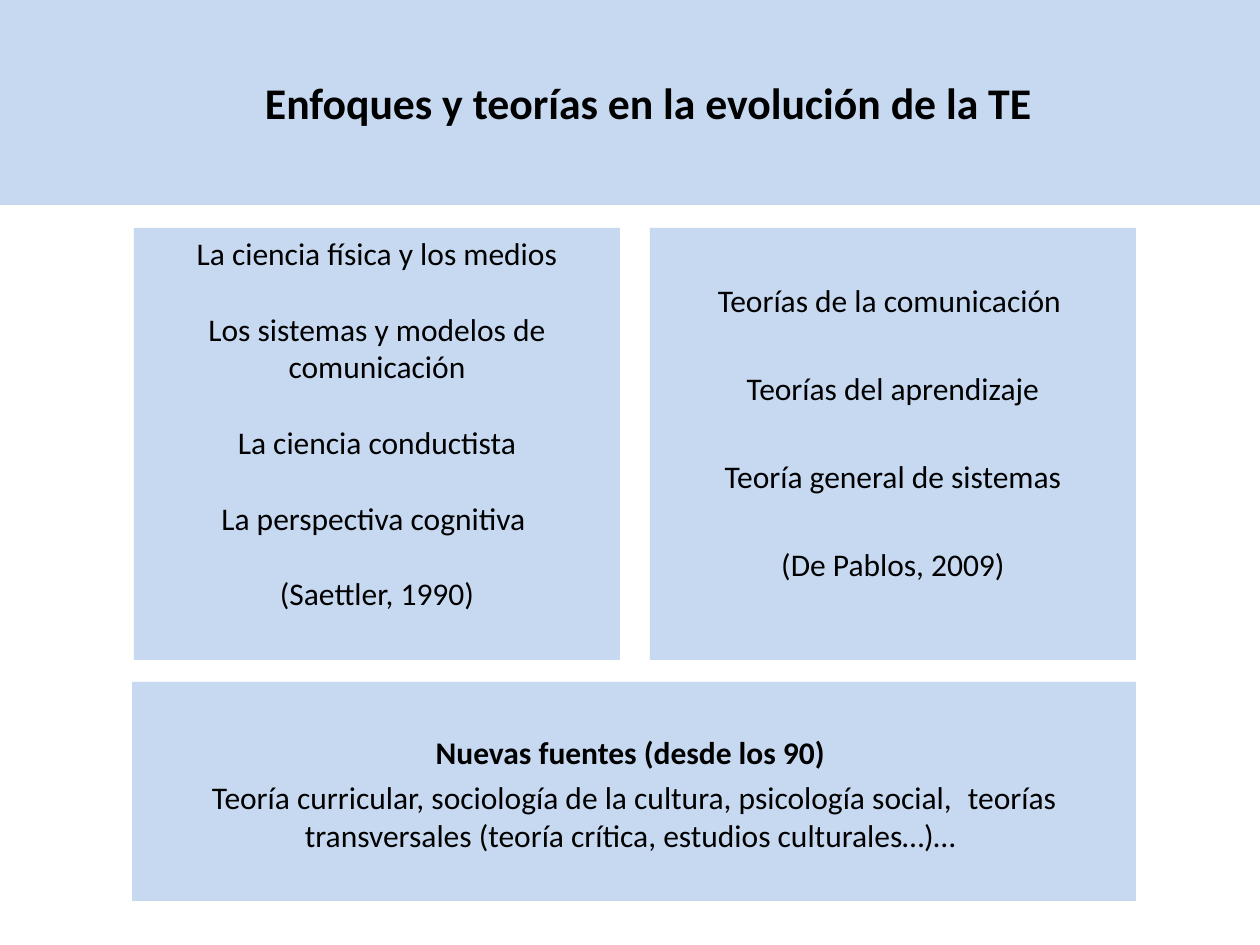
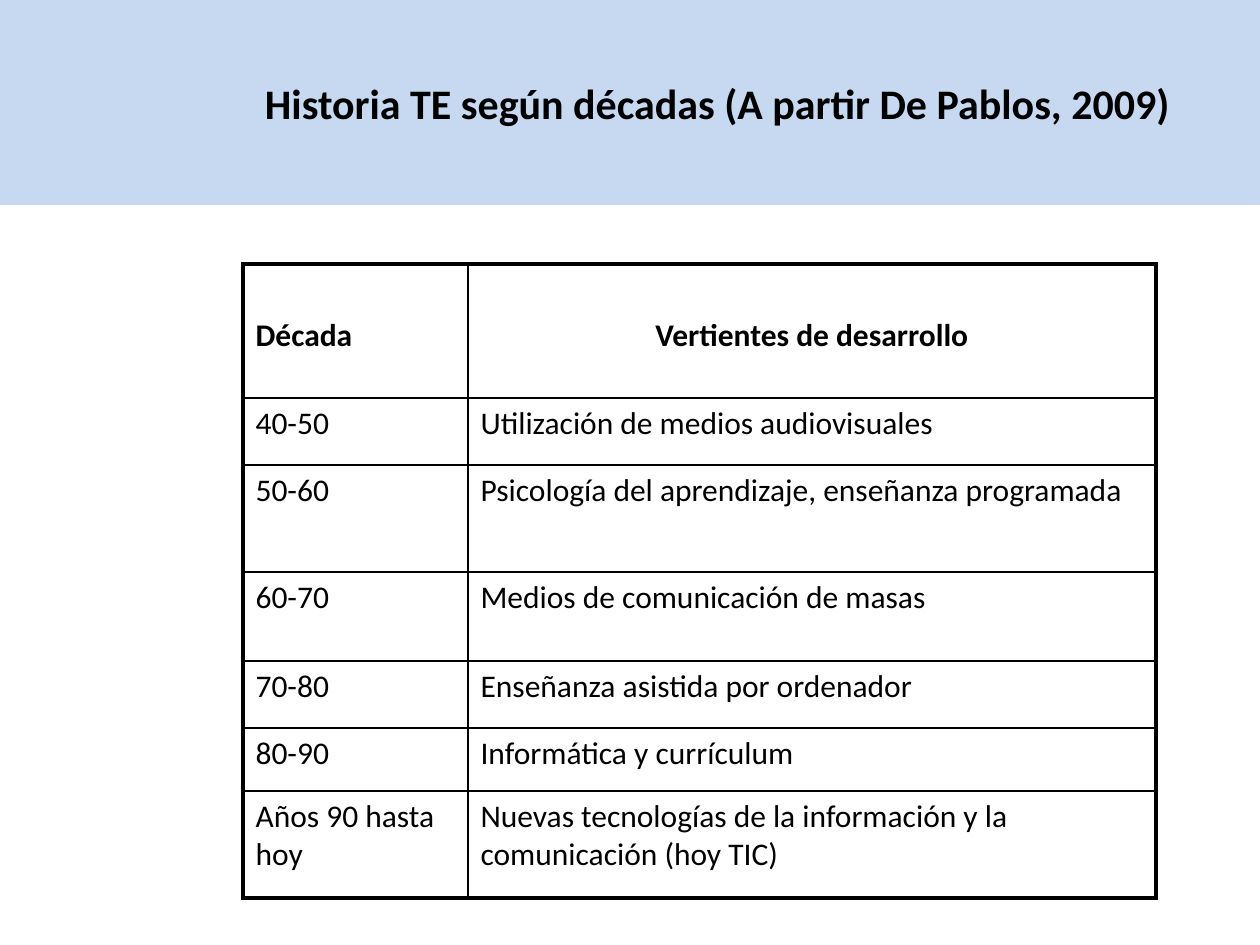
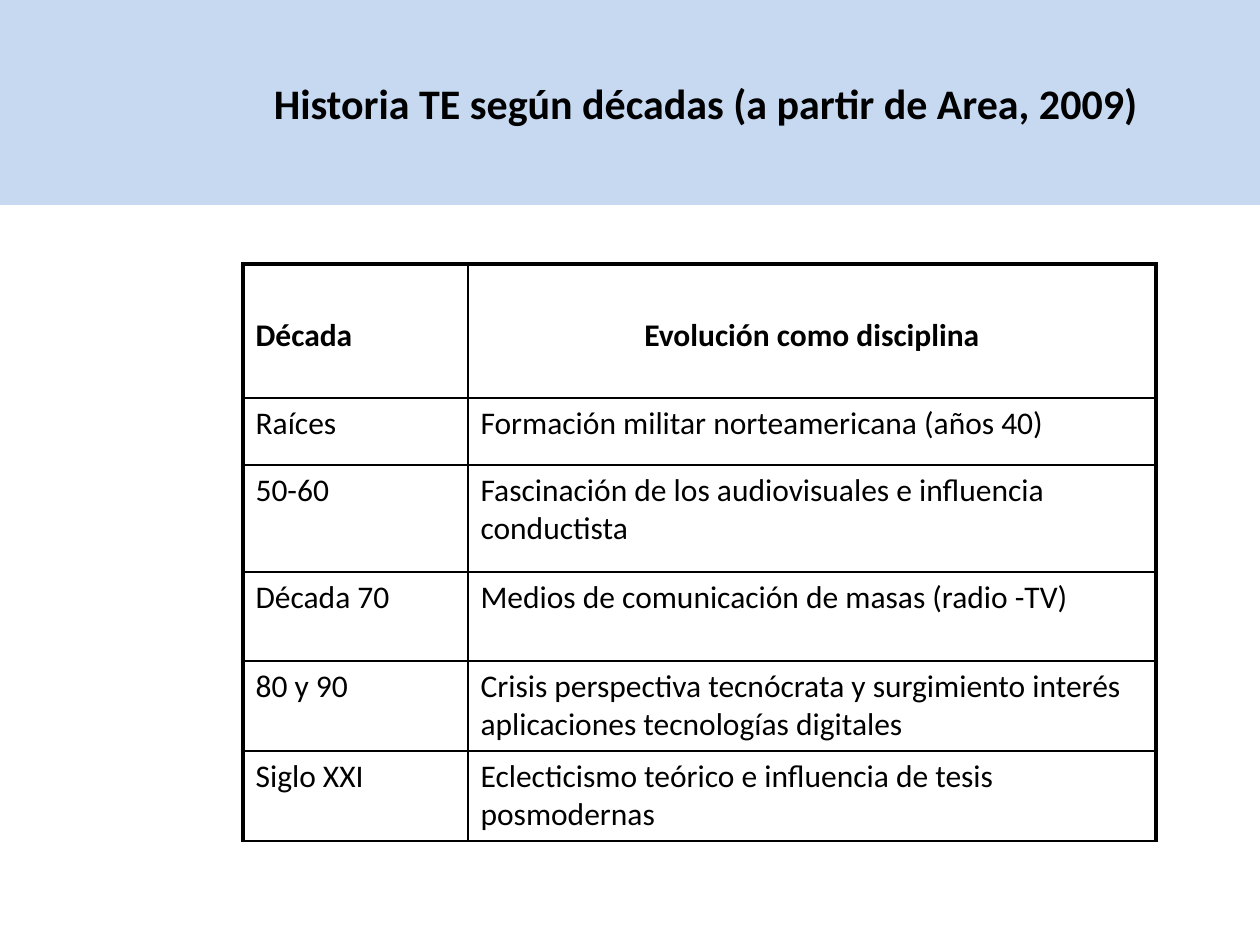
import pptx
import pptx.dml.color
import pptx.enum.shapes
import pptx.enum.text
import pptx.oxml.ns
import pptx.util
from lxml import etree

ALIGN = pptx.enum.text.PP_ALIGN
ANCHOR = pptx.enum.text.MSO_ANCHOR
FONT, BLUE, BLACK = "Calibri", "C6D9F1", "000000"
BODY_SIZE = 18
THIN, THICK = 1, 2.25

SLIDE_W, SLIDE_H, BAND_H = 1260, 945, 205
TABLE_X, TABLE_Y = 243, 264
COL_WIDTHS = (225, 688)
HEADER_MARGIN = 52

APPROACHES_TITLE = "Enfoques y teorías en la evolución de la TE"
BOXES = [
    {"at": (134, 228, 486, 432), "top": 6, "gap": 21.6, "bold": False, "lines": [
        "La ciencia física y los medios",
        "Los sistemas y modelos de comunicación",
        "La ciencia conductista",
        "La perspectiva cognitiva ",
        "(Saettler, 1990)"]},
    {"at": (650, 228, 486, 432), "top": 53, "gap": 28.7, "bold": False, "lines": [
        "Teorías de la comunicación ",
        "Teorías del aprendizaje",
        "Teoría general de sistemas",
        "(De Pablos, 2009)"]},
    {"at": (132, 682, 1004, 219), "top": 51, "gap": 4.4, "bold": True, "lines": [
        "Nuevas fuentes (desde los 90) ",
        "Teoría curricular, sociología de la cultura, psicología social, "
        "\tteorías transversales (teoría crítica, estudios culturales…)… "]},
]
HISTORIES = [
    {"title": "Historia TE según décadas (A partir De Pablos, 2009)",
     "indent": 265, "bottom": THICK,
     "heights": (134, 67, 107, 89, 67, 63, 107),
     "rows": [
         ("Década", "Vertientes de desarrollo"),
         ("40-50", "Utilización de medios audiovisuales"),
         ("50-60", "Psicología del aprendizaje, enseñanza programada"),
         ("60-70", "Medios de comunicación de masas"),
         ("70-80", "Enseñanza asistida por ordenador"),
         ("80-90", "Informática y currículum"),
         ("Años 90 hasta hoy",
          "Nuevas tecnologías de la información y la comunicación (hoy TIC)")]},
    {"title": "Historia TE según décadas (a partir de Area, 2009)",
     "indent": 274, "bottom": THIN,
     "heights": (134, 67, 107, 89, 90, 90),
     "rows": [
         ("Década", "Evolución como disciplina"),
         ("Raíces", "Formación militar norteamericana (años 40)"),
         ("50-60", "Fascinación de los audiovisuales e influencia conductista"),
         ("Década 70", "Medios de comunicación de masas (radio -TV)"),
         ("80 y 90", "Crisis perspectiva tecnócrata y surgimiento interés "
                     "aplicaciones tecnologías digitales"),
         ("Siglo XXI", "Eclecticismo teórico e influencia de tesis posmodernas")]},
]


def px(n):
    return pptx.util.Emu(round(n * 914400 / 126))


def color(value):
    return pptx.dml.color.RGBColor.from_string(value)


def fill(sp):
    sp.fill.solid()
    sp.fill.fore_color.rgb = color(BLUE)


def format_paragraph(p, size, bold, align):
    p.alignment = align
    for r in p.runs:
        r.font.name = FONT
        r.font.size = pptx.util.Pt(size)
        r.font.bold = bold
        r.font.color.rgb = color(BLACK)


def add_slide(prs, title, size, indent):
    slide = prs.slides.add_slide(prs.slide_layouts[5])
    sp = slide.shapes.title
    sp.left, sp.top, sp.width, sp.height = px(0), px(0), px(SLIDE_W), px(BAND_H)
    fill(sp)
    tf = sp.text_frame
    tf.text = title
    tf.word_wrap = True
    tf.auto_size = pptx.enum.text.MSO_AUTO_SIZE.NONE
    tf.vertical_anchor = ANCHOR.MIDDLE
    tf.margin_left = px(indent)
    format_paragraph(tf.paragraphs[0], size, True, ALIGN.LEFT)
    return slide


def add_box(slide, box):
    sp = slide.shapes.add_shape(pptx.enum.shapes.MSO_SHAPE.RECTANGLE, *map(px, box["at"]))
    sp.shadow.inherit = False
    fill(sp)
    sp.line.fill.background()
    tf = sp.text_frame
    tf.word_wrap = True
    tf.vertical_anchor = ANCHOR.TOP
    tf.margin_top = px(box["top"])
    tf.text = "\n".join(box["lines"])
    for i, p in enumerate(tf.paragraphs):
        p.space_after = pptx.util.Pt(box["gap"])
        format_paragraph(p, BODY_SIZE, box["bold"] and i == 0, ALIGN.CENTER)


def set_borders(cell, widths):
    tc_pr = cell._tc.get_or_add_tcPr()
    qn = pptx.oxml.ns.qn
    for side, width in zip("LRTB", widths):
        ln = etree.SubElement(tc_pr, qn(f"a:ln{side}"), w=str(pptx.util.Pt(width)))
        solid = etree.SubElement(ln, qn("a:solidFill"))
        etree.SubElement(solid, qn("a:srgbClr"), val=BLACK)


def add_history_table(slide, history):
    rows, heights = history["rows"], history["heights"]
    last_row, last_col = len(rows) - 1, len(COL_WIDTHS) - 1
    table = slide.shapes.add_table(
        len(rows), len(COL_WIDTHS), px(TABLE_X), px(TABLE_Y),
        px(sum(COL_WIDTHS)), px(sum(heights))).table
    table.first_row = table.horz_banding = False
    for col, width in zip(table.columns, COL_WIDTHS):
        col.width = px(width)
    for i, (texts, height) in enumerate(zip(rows, heights)):
        table.rows[i].height = px(height)
        header = i == 0
        for j, text in enumerate(texts):
            cell = table.cell(i, j)
            cell.text = text
            if header:
                cell.margin_top = px(HEADER_MARGIN)
            align = ALIGN.CENTER if header and j == last_col else ALIGN.LEFT
            format_paragraph(cell.text_frame.paragraphs[0], BODY_SIZE, header, align)
            set_borders(cell, (
                THICK if j == 0 else THIN,
                THICK if j == last_col else THIN,
                THICK if header else THIN,
                history["bottom"] if i == last_row else THIN))
            cell.fill.background()


def main():
    prs = pptx.Presentation()
    prs.slide_width, prs.slide_height = px(SLIDE_W), px(SLIDE_H)
    slide = add_slide(prs, APPROACHES_TITLE, 25, 265)
    for box in BOXES:
        add_box(slide, box)
    for history in HISTORIES:
        slide = add_slide(prs, history["title"], 24, history["indent"])
        add_history_table(slide, history)
    prs.save("out.pptx")


if __name__ == "__main__":
    main()
